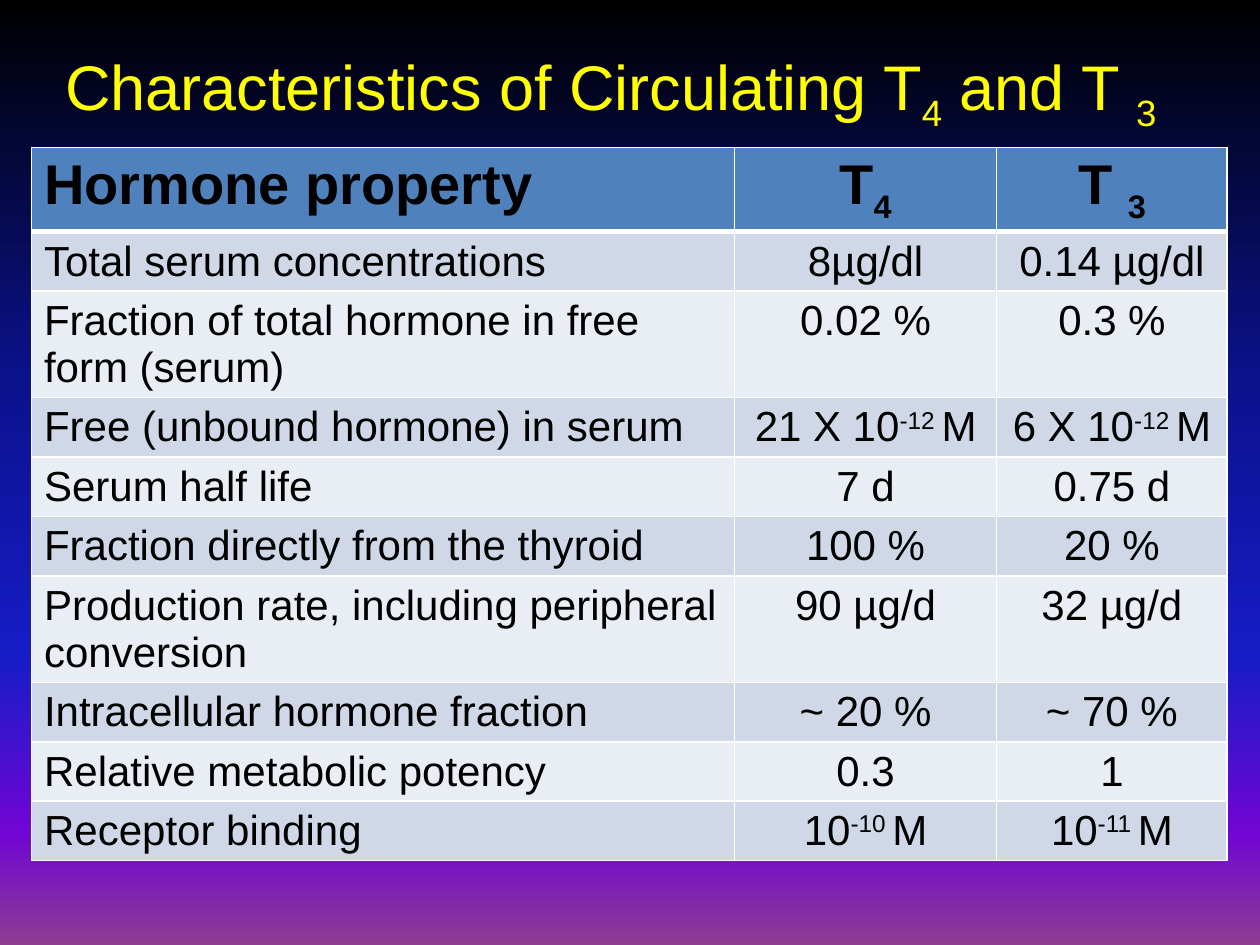
"""Build a slide with a table that compares the hormones T4 and T3."""
import pptx
import pptx.dml.color
import pptx.enum.text
import pptx.oxml
import pptx.oxml.ns
import pptx.util
from pptx.util import Inches

HUES = {
    "title": "FFFF00", "text": "000000", "head": "4F81BD",
    "odd": "D0D8E8", "even": "E9EDF4", "line": "FFFFFF",
}
STOPS = {0: "000000", 40: "0A128C", 70: "181CC7", 88: "7005D4", 100: "8C3D91"}
SHIFTS = {"_": "-25000", "^": "30000"}
ROWS = [
    ("Hormone property", "T|_4", "T |_3"),
    ("Total serum concentrations", "8µg/dl", "0.14 µg/dl"),
    ("Fraction of total hormone in free form (serum)", "0.02 %", "0.3 %"),
    ("Free (unbound hormone) in serum", "21 X 10|^-12 |M", "6 X 10|^-12 |M"),
    ("Serum half life", "7 d", "0.75 d"),
    ("Fraction directly from the thyroid", "100 %", "20 %"),
    ("Production rate, including peripheral conversion", "90 µg/d", "32 µg/d"),
    ("Intracellular hormone fraction", "~ 20 %", "~ 70 %"),
    ("Relative metabolic potency", "0.3", "1"),
    ("Receptor binding", "10|^-10 |M", "10|^-11 |M"),
]
WIDTHS = [5.58, 2.08, 1.83]
HIGH = 0.43
NS = pptx.oxml.ns.nsdecls("a")


def write(para, text, size, hue, bold=False):
    """Add runs split at bars; a leading _ lowers a run and ^ raises it."""
    for part in text.split("|"):
        run = para.add_run()
        run.text = part.lstrip("_^")
        font = run.font
        font.name = "Arial"
        font.size = pptx.util.Pt(size)
        font.bold = bold
        font.color.rgb = pptx.dml.color.RGBColor.from_string(HUES[hue])
        if part[0] in SHIFTS:
            run._r.get_or_add_rPr().set("baseline", SHIFTS[part[0]])


def edge(cell, side, width):
    """Draw one solid border of a cell, with its width in points."""
    cell._tc.get_or_add_tcPr().append(pptx.oxml.parse_xml(
        f'<a:ln{side} {NS} w="{pptx.util.Pt(width)}"><a:solidFill>'
        f'<a:srgbClr val="{HUES["line"]}"/></a:solidFill></a:ln{side}>'))


deck = pptx.Presentation()
deck.slide_width, deck.slide_height = Inches(10), Inches(7.5)
slide = deck.slides.add_slide(deck.slide_layouts[6])

back = slide.background.fill
back.gradient()
back.gradient_angle = 270
stops = slide.background._cSld.find(".//" + pptx.oxml.ns.qn("a:gsLst"))
for stop in list(stops):
    stops.remove(stop)
for place, hue in STOPS.items():
    stops.append(pptx.oxml.parse_xml(
        f'<a:gs {NS} pos="{place * 1000}"><a:srgbClr val="{hue}"/></a:gs>'))

frame = slide.shapes.add_table(
    len(ROWS), len(WIDTHS), Inches(0.25), Inches(1.17),
    Inches(sum(WIDTHS)), Inches(HIGH * len(ROWS)))
table = frame.table
for col, width in zip(table.columns, WIDTHS):
    col.width = Inches(width)
for i, row in enumerate(ROWS):
    table.rows[i].height = Inches(HIGH)
    shade = "head" if i == 0 else "odd" if i % 2 else "even"
    for j, text in enumerate(row):
        cell = table.cell(i, j)
        para = cell.text_frame.paragraphs[0]
        if j:
            para.alignment = pptx.enum.text.PP_ALIGN.CENTER
        write(para, text, 24 if i else 32, "text", i == 0)
        for side in "LRTB":
            thick = (i, side) in [(0, "B"), (1, "T")]
            edge(cell, side, 3 if thick else 1)
        cell.fill.solid()
        cell.fill.fore_color.rgb = pptx.dml.color.RGBColor.from_string(HUES[shade])

title = slide.shapes.add_textbox(
    Inches(0.42), Inches(0.33), Inches(9.08), Inches(0.71)).text_frame
title.word_wrap = True
title.auto_size = pptx.enum.text.MSO_AUTO_SIZE.SHAPE_TO_FIT_TEXT
write(title.paragraphs[0], "Characteristics of Circulating T|_4| and T |_3", 36, "title")

deck.save("out.pptx")
